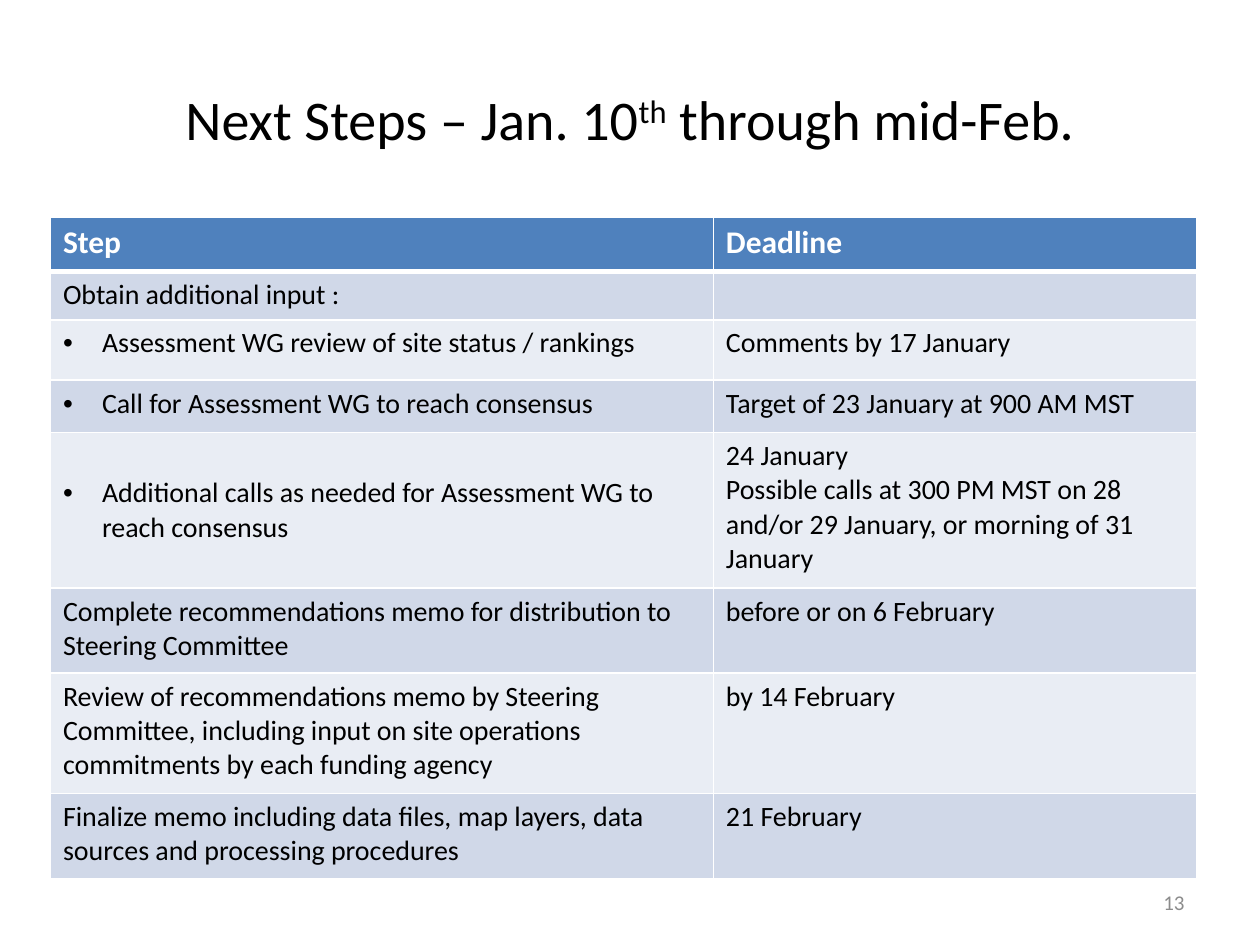
import dataclasses

import lxml.etree
import pptx
import pptx.dml.color
import pptx.enum.text
import pptx.oxml.ns
import pptx.util

ALIGN = pptx.enum.text.PP_ALIGN
ANCHOR = pptx.enum.text.MSO_ANCHOR
WIDE, HIGH = pptx.util.Inches(10), pptx.util.Inches(7.5)


@dataclasses.dataclass(frozen=True)
class Theme:
    """Colours, type sizes and line widths of the slide."""
    font: str = "Calibri"
    ink: str = "000000"
    white: str = "FFFFFF"
    grey: str = "8C8C8C"
    head: str = "4F81BD"
    bands: tuple = ("D0D8E8", "E9EDF4")
    title: int = 32
    label: int = 18
    body: int = 16
    small: int = 12
    thin: int = 1
    thick: int = 3


THEME = Theme()
COLS = (5.25, 3.83)
HEAD = (0.43, "Step", "Deadline")
STEPS = (
    (0.39, "Obtain additional input :", ""),
    (0.48, "• Assessment WG review of site status / rankings", "Comments by 17 January"),
    (0.42, "• Call for Assessment WG to reach consensus", "Target of 23 January at 900 AM MST"),
    (1.24, "• Additional calls as needed for Assessment WG to reach consensus",
     "24 January\nPossible calls at 300 PM MST on 28 and/or 29 January, or morning of 31 January"),
    (0.68, "Complete recommendations memo for distribution to Steering Committee",
     "before or on 6 February"),
    (0.96, "Review of recommendations memo by Steering Committee, including input on site "
     "operations commitments by each funding agency", "by 14 February"),
    (0.68, "Finalize memo including data files, map layers, data sources and processing procedures",
     "21 February"),
)


def scale(box):
    """Turn shares of the slide into lengths."""
    x, y, w, h = box
    return int(x * WIDE), int(y * HIGH), int(w * WIDE), int(h * HIGH)


def node(parent, tag, **attrs):
    """Add a drawing element to a parent."""
    return lxml.etree.SubElement(parent, pptx.oxml.ns.qn(tag), **attrs)


def style(para, size, color, bold=False):
    """Set the font of a paragraph."""
    font = para.font
    font.name, font.size, font.bold = THEME.font, pptx.util.Pt(size), bold
    font.color.rgb = pptx.dml.color.RGBColor.from_string(color)


def line(slide, box, parts, size, color, align):
    """Place one line of text, raising every second part."""
    frame = slide.shapes.add_textbox(*scale(box)).text_frame
    frame.word_wrap, frame.vertical_anchor = True, ANCHOR.MIDDLE
    para = frame.paragraphs[0]
    para.alignment = align
    style(para, size, color)
    for i, part in enumerate(parts):
        run = para.add_run()
        run.text = part
        if i % 2:
            run._r.get_or_add_rPr().set("baseline", "30000")


def edge(cell, top, base):
    """Draw white borders around a cell."""
    props = cell._tc.get_or_add_tcPr()
    sides = (("a:lnL", THEME.thin), ("a:lnR", THEME.thin), ("a:lnT", top), ("a:lnB", base))
    for i, (tag, width) in enumerate(sides):
        border = node(props, tag, w=str(pptx.util.Pt(width)))
        node(node(border, "a:solidFill"), "a:srgbClr", val=THEME.white)
        props.insert(i, border)


def write(cell, text, size, color, bold):
    """Fill a cell with text, hanging any bullet."""
    dot = text.startswith("• ")
    cell.text_frame.text = text.removeprefix("• ")
    for para in cell.text_frame.paragraphs:
        if dot:
            indent = pptx.util.Inches(0.31)
            props = para._p.get_or_add_pPr()
            props.set("marL", str(indent))
            props.set("indent", str(-indent))
            node(props, "a:buFont", typeface="Arial")
            node(props, "a:buChar", char="•")
        style(para, size, color, bold)
        if not text:
            node(para._p, "a:endParaRPr", sz=str(size * 100))


def plan(slide, box):
    """Place the table of steps and deadlines."""
    x, y, w, h = scale(box)
    rows = (HEAD, *STEPS)
    table = slide.shapes.add_table(len(rows), len(COLS), x, y, w, h).table
    table.horz_banding = False
    for col, share in zip(table.columns, COLS):
        col.width = int(w * share / sum(COLS))
    total = sum(row[0] for row in rows)
    for r, (share, *texts) in enumerate(rows):
        table.rows[r].height = int(h * share / total)
        first = r == 0
        size, color = (THEME.label, THEME.white) if first else (THEME.body, THEME.ink)
        fill = THEME.head if first else THEME.bands[(r - 1) % 2]
        for c, text in enumerate(texts):
            cell = table.cell(r, c)
            cell.fill.solid()
            cell.fill.fore_color.rgb = pptx.dml.color.RGBColor.from_string(fill)
            edge(cell, THEME.thick if r == 1 else THEME.thin, THEME.thick if first else THEME.thin)
            write(cell, text, size, color, first)
    table.cell(4, 0).vertical_anchor = ANCHOR.MIDDLE


def main():
    """Build and save the slide."""
    deck = pptx.Presentation()
    deck.slide_width, deck.slide_height = WIDE, HIGH
    slide = deck.slides.add_slide(deck.slide_layouts[6])
    line(slide, (0.05, 0.04, 0.9, 0.17), ("Next Steps – Jan. 10", "th", " through mid-Feb."),
         THEME.title, THEME.ink, ALIGN.CENTER)
    line(slide, (0.72, 0.93, 0.23, 0.05), ("13",), THEME.small, THEME.grey, ALIGN.RIGHT)
    plan(slide, (0.04, 0.23, 0.91, 0.7))
    deck.save("out.pptx")


if __name__ == "__main__":
    main()
